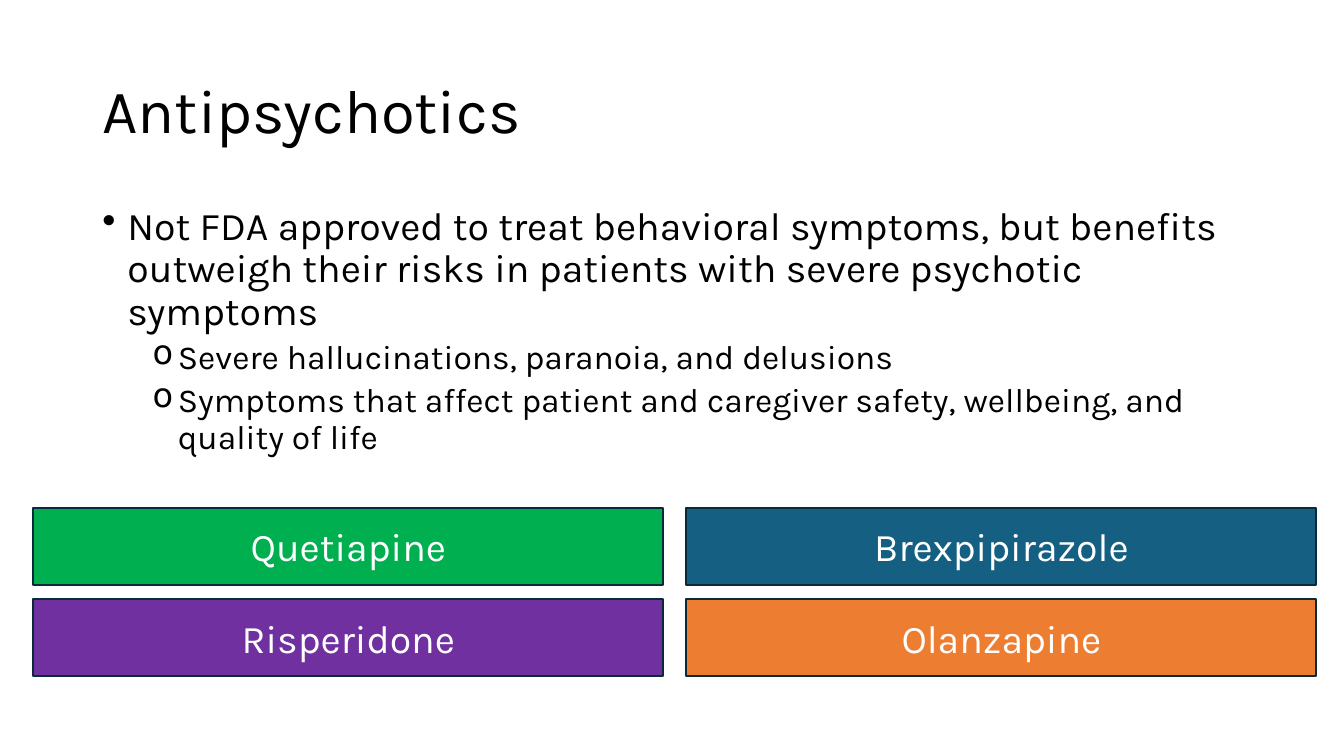
from dataclasses import dataclass

from lxml import etree
from pptx import Presentation
from pptx.dml.color import RGBColor
from pptx.enum import shapes, text
from pptx.oxml.ns import qn
from pptx.util import Pt

FONT = "Karla"
COLORS = {
    "ink": "000000",
    "white": "FFFFFF",
    "outline": "092A39",
    "green": "00B050",
    "blue": "156082",
    "purple": "7030A0",
    "orange": "ED7D31",
}
MARGIN, CONTENT_W = 66, 828
CARD_LEFT, CARD_TOP = 23.76, 362.88
CARD_W, CARD_H = 450, 54.72
COL_STEP, ROW_STEP = 466.56, 65.16


@dataclass(frozen=True)
class Bullet:
    words: str
    level: int
    mark: str
    size: float
    indent: float
    before: float


@dataclass(frozen=True)
class Drug:
    name: str
    color: str
    col: int
    row: int


BULLETS = [
    Bullet("Not FDA approved to treat behavioral symptoms, but benefits outweigh "
           "their risks in patients with severe psychotic symptoms", 0, "•", 28, 18, 0),
    Bullet("Severe hallucinations, paranoia, and delusions", 1, "o", 24, 54, 5),
    Bullet("Symptoms that affect patient and caregiver safety, wellbeing, and "
           "quality of life", 1, "o", 24, 54, 5),
]
DRUGS = [
    Drug("Quetiapine", "green", 0, 0),
    Drug("Brexpipirazole", "blue", 1, 0),
    Drug("Risperidone", "purple", 0, 1),
    Drug("Olanzapine", "orange", 1, 1),
]


def rgb(name: str) -> RGBColor:
    return RGBColor.from_string(COLORS[name])


def add_run(p, words: str, size: float, color: str) -> None:
    r = p.add_run()
    r.text = words
    r.font.name = FONT
    r.font.size = Pt(size)
    r.font.color.rgb = rgb(color)


def add_title(s, words: str) -> None:
    sp = s.shapes.title
    sp.left, sp.top, sp.width, sp.height = Pt(MARGIN), Pt(28.8), Pt(CONTENT_W), Pt(104.4)
    tf = sp.text_frame
    tf.vertical_anchor = text.MSO_ANCHOR.MIDDLE
    p = tf.paragraphs[0]
    p.alignment = text.PP_ALIGN.LEFT
    p.line_spacing = 0.9
    add_run(p, words, 44, "ink")


def add_bullets(s, bullets: list[Bullet]) -> None:
    sp = s.shapes.add_textbox(Pt(MARGIN), Pt(144), Pt(CONTENT_W), Pt(342.72))
    tf = sp.text_frame
    tf.word_wrap = True
    for i, bullet in enumerate(bullets):
        p = tf.add_paragraph() if i else tf.paragraphs[0]
        p.level = bullet.level
        p.line_spacing = 0.9
        p.space_before = Pt(bullet.before)
        pPr = p._p.get_or_add_pPr()
        pPr.set("marL", str(Pt(bullet.indent)))
        pPr.set("indent", str(-Pt(18)))
        etree.SubElement(pPr, qn("a:buChar"), char=bullet.mark)
        add_run(p, bullet.words, bullet.size, "ink")


def add_drug(s, drug: Drug) -> None:
    sp = s.shapes.add_shape(
        shapes.MSO_SHAPE.RECTANGLE,
        Pt(CARD_LEFT + drug.col * COL_STEP), Pt(CARD_TOP + drug.row * ROW_STEP),
        Pt(CARD_W), Pt(CARD_H))
    sp.shadow.inherit = False
    sp.fill.solid()
    sp.fill.fore_color.rgb = rgb(drug.color)
    sp.line.color.rgb = rgb("outline")
    sp.line.width = Pt(1.5)
    tf = sp.text_frame
    tf.vertical_anchor = text.MSO_ANCHOR.MIDDLE
    p = tf.paragraphs[0]
    p.alignment = text.PP_ALIGN.CENTER
    add_run(p, drug.name, 28, "white")


def main() -> None:
    prs = Presentation()
    prs.slide_width, prs.slide_height = Pt(960), Pt(540)
    s = prs.slides.add_slide(prs.slide_layouts.get_by_name("Title Only"))
    add_title(s, "Antipsychotics")
    add_bullets(s, BULLETS)
    for drug in DRUGS:
        add_drug(s, drug)
    prs.save("out.pptx")


if __name__ == "__main__":
    main()
